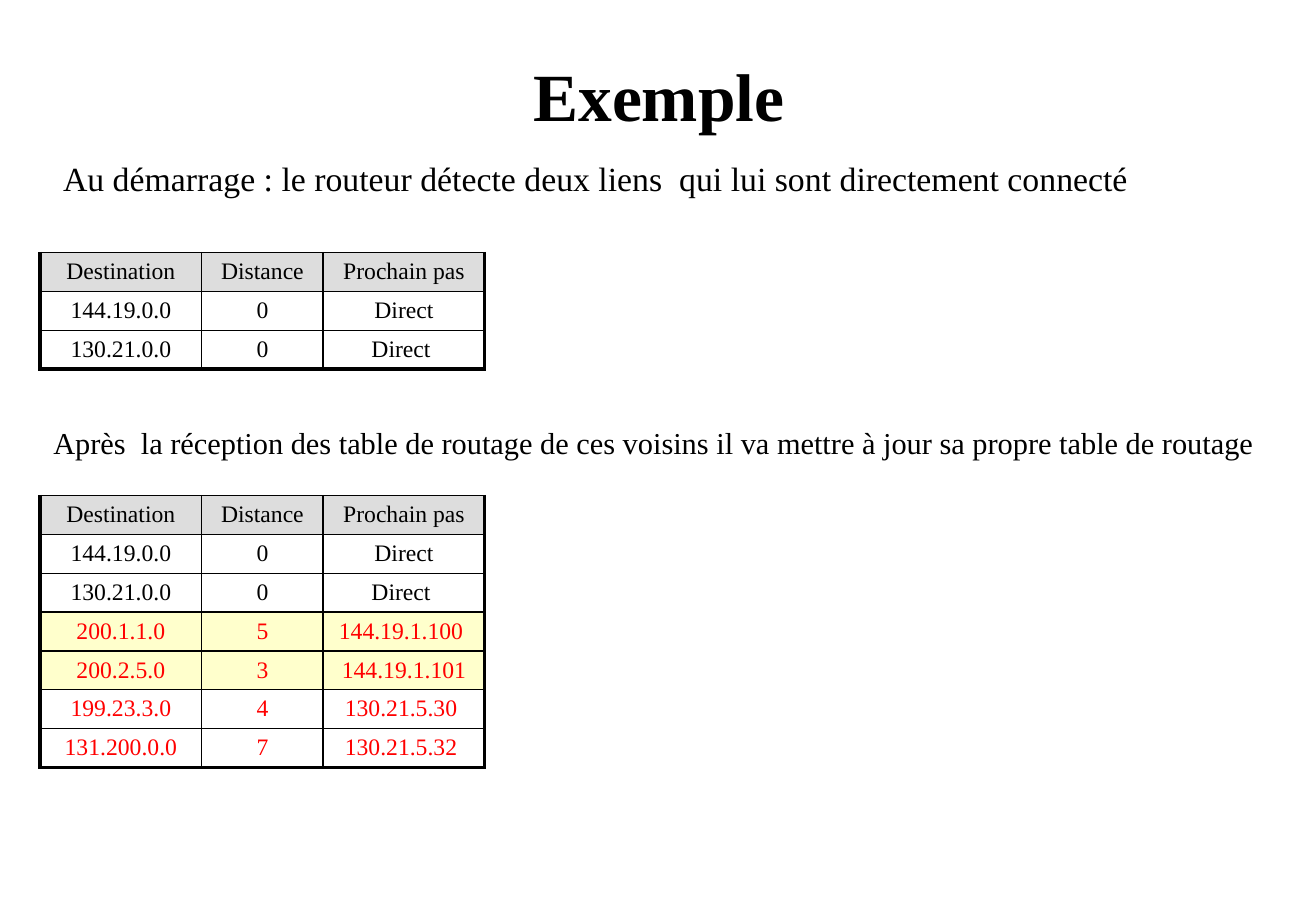
from lxml.etree import SubElement
from pptx import Presentation
from pptx.dml.color import RGBColor
from pptx.enum.text import MSO_ANCHOR, MSO_AUTO_SIZE, PP_ALIGN
from pptx.oxml.ns import qn
from pptx.util import Inches, Pt

BLACK = RGBColor(0x00, 0x00, 0x00)
RED = RGBColor(0xFF, 0x00, 0x00)
WHITE = RGBColor(0xFF, 0xFF, 0xFF)
GREY = RGBColor(0xDD, 0xDD, 0xDD)
YELLOW = RGBColor(0xFF, 0xFF, 0xCC)
SERIF = "Times New Roman"

# Rows: text colour, fill, cells
INITIAL_ROUTES = [
    (BLACK, GREY, ("Destination", "Distance", "Prochain pas")),
    (BLACK, WHITE, ("144.19.0.0", "0", "Direct")),
    (BLACK, WHITE, ("130.21.0.0", "0", "Direct ")),
]
LEARNED_ROUTES = [
    (RED, YELLOW, ("200.1.1.0", "5", "144.19.1.100 ")),
    (RED, YELLOW, ("200.2.5.0", "3", "144.19.1.101")),
    (RED, WHITE, ("199.23.3.0", "4", "130.21.5.30 ")),
    (RED, WHITE, ("131.200.0.0", "7", "130.21.5.32 ")),
]
# Tables: top, rows
TABLES = [(2.08, INITIAL_ROUTES), (4.08, INITIAL_ROUTES + LEARNED_ROUTES)]
# Captions: left, top, width, height, size, text
CAPTIONS = [
    (0.42, 1.25, 9.09, 0.44, 20,
     "Au démarrage : le routeur détecte deux liens  qui lui sont directement connecté"),
    (0.34, 3.44, 10.09, 0.4, 18,
     "Après  la réception des table de routage de ces voisins il va mettre à jour "
     "sa propre table de routage"),
]
TABLE_LEFT = 0.33
COLUMN_WIDTHS = (1.33, 1, 1.33)
ROW_HEIGHT = 0.32
THIN, THICK = 1, 2.25


def add_run(paragraph, text, size, color=BLACK, font=SERIF, bold=False):
    run = paragraph.add_run()
    run.text = text
    run.font.name = font
    run.font.size = Pt(size)
    run.font.bold = bold
    run.font.color.rgb = color


def set_borders(cell, widths):
    """Draw black borders; widths are points for left, right, top, bottom."""
    properties = cell._tc.get_or_add_tcPr()
    for side, width in zip("LRTB", widths):
        line = SubElement(properties, qn(f"a:ln{side}"), w=str(Pt(width)))
        fill = SubElement(line, qn("a:solidFill"))
        SubElement(fill, qn("a:srgbClr"), val=str(BLACK))


def add_route_table(slide, top, rows):
    last_row, last_column = len(rows) - 1, len(COLUMN_WIDTHS) - 1
    table = slide.shapes.add_table(
        len(rows), len(COLUMN_WIDTHS), Inches(TABLE_LEFT), Inches(top),
        Inches(sum(COLUMN_WIDTHS)), Inches(ROW_HEIGHT * len(rows))).table
    table.first_row = table.horz_banding = False
    for column, width in zip(table.columns, COLUMN_WIDTHS):
        column.width = Inches(width)
    for row_index, (color, fill, texts) in enumerate(rows):
        table.rows[row_index].height = Inches(ROW_HEIGHT)
        for column_index, text in enumerate(texts):
            cell = table.cell(row_index, column_index)
            set_borders(cell, (
                THICK if column_index == 0 else THIN,
                THICK if column_index == last_column else THIN,
                THIN,
                THICK if row_index == last_row else THIN))
            cell.fill.solid()
            cell.fill.fore_color.rgb = fill
            paragraph = cell.text_frame.paragraphs[0]
            paragraph.alignment = PP_ALIGN.CENTER
            add_run(paragraph, text, 14, color)


def add_caption(slide, left, top, width, height, size, text):
    box = slide.shapes.add_textbox(
        Inches(left), Inches(top), Inches(width), Inches(height))
    box.text_frame.word_wrap = False
    box.text_frame.auto_size = MSO_AUTO_SIZE.SHAPE_TO_FIT_TEXT
    add_run(box.text_frame.paragraphs[0], text, size)


def set_title(slide):
    title = slide.shapes.title
    title.left, title.top = Inches(0.39), Inches(0.39)
    title.width, title.height = Inches(10.23), Inches(0.77)
    title.text_frame.vertical_anchor = MSO_ANCHOR.MIDDLE
    paragraph = title.text_frame.paragraphs[0]
    paragraph.alignment = PP_ALIGN.CENTER
    add_run(paragraph, "Exemple", 40, bold=True)
    add_run(paragraph, " ", 36, font="Comic Neue")


def main():
    presentation = Presentation()
    presentation.slide_width = Inches(10.83)
    presentation.slide_height = Inches(7.5)
    slide = presentation.slides.add_slide(presentation.slide_layouts[5])
    set_title(slide)
    for top, rows in TABLES:
        add_route_table(slide, top, rows)
    for caption in CAPTIONS:
        add_caption(slide, *caption)
    presentation.save("out.pptx")


if __name__ == "__main__":
    main()
